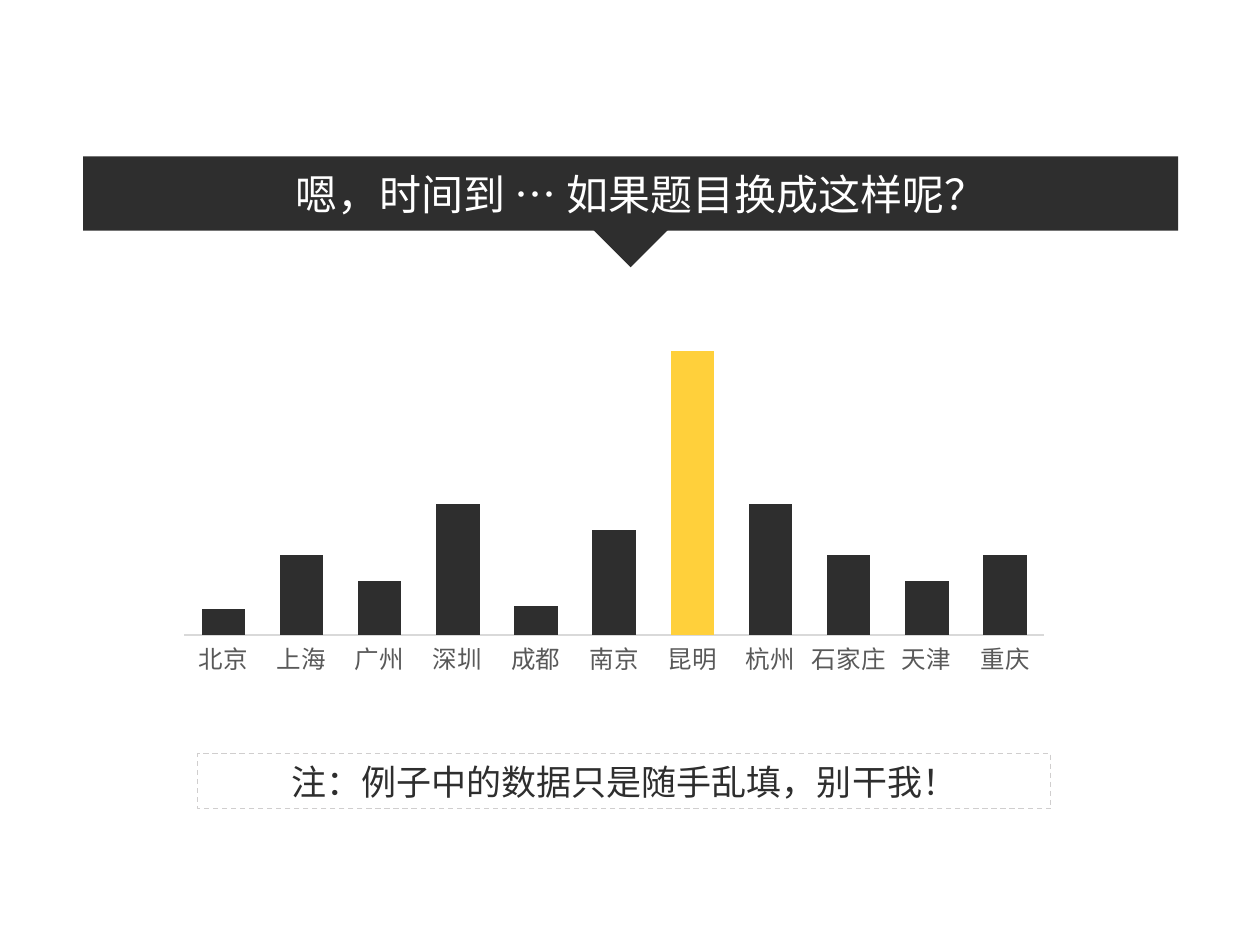
from lxml.etree import SubElement
from pptx import Presentation
from pptx.chart.data import CategoryChartData
from pptx.dml.color import RGBColor
from pptx.enum.chart import XL_CHART_TYPE, XL_TICK_LABEL_POSITION, XL_TICK_MARK
from pptx.enum.dml import MSO_LINE
from pptx.enum.shapes import MSO_SHAPE
from pptx.enum.text import MSO_ANCHOR, PP_ALIGN
from pptx.oxml import parse_xml
from pptx.oxml.ns import nsdecls, qn
from pptx.util import Inches, Pt

DARK, YELLOW, WHITE = "2E2E2E", "FFD03B", "FFFFFF"
LABEL_GRAY, AXIS_GRAY, BORDER_GRAY = "595959", "D9D9D9", "D0CECE"
BODY_FONT, TITLE_FONT = "Noto Sans CJK SC", "Noto Sans CJK TC"

CITY_VALUES = {
    "北京": 9, "上海": 28, "广州": 19, "深圳": 46, "成都": 10, "南京": 37,
    "昆明": 100, "杭州": 46, "石家庄": 28, "天津": 19, "重庆": 28,
}
HIGHLIGHTED_CITY = "昆明"


def rgb(color):
    return RGBColor.from_string(color)


def format_font(font, size, color, name):
    """Set the Latin and the East Asian typeface along with size and colour."""
    font.size = Pt(size)
    font.name = name
    font.color.rgb = rgb(color)
    east_asian = SubElement(font._element, qn("a:ea"))
    east_asian.set("typeface", name)


def write_text(shape, text, size=20, color=DARK, font=BODY_FONT, wrap=True):
    frame = shape.text_frame
    frame.word_wrap = wrap
    frame.vertical_anchor = MSO_ANCHOR.MIDDLE
    paragraph = frame.paragraphs[0]
    paragraph.alignment = PP_ALIGN.CENTER
    run = paragraph.add_run()
    run.text = text
    format_font(run.font, size, color, font)


def add_block(slide, kind, left, top, width, height, fill=None):
    block = slide.shapes.add_shape(
        kind, Inches(left), Inches(top), Inches(width), Inches(height))
    block.shadow.inherit = False
    block.line.fill.background()
    if fill:
        block.fill.solid()
        block.fill.fore_color.rgb = rgb(fill)
    else:
        block.fill.background()
    return block


def add_title_banner(slide, left, top, width, height):
    add_block(slide, MSO_SHAPE.RECTANGLE, left, top, width, height, DARK)

    pointer_side = 0.44
    pointer = add_block(
        slide, MSO_SHAPE.RIGHT_TRIANGLE, left + (width - pointer_side) / 2,
        top + height - 0.24, pointer_side, pointer_side, DARK)
    pointer.rotation = 315

    title_width, title_height = 5.68, 0.5
    title = slide.shapes.add_textbox(
        Inches(left + (width - title_width) / 2 + 0.08),
        Inches(top + (height - title_height) / 2),
        Inches(title_width), Inches(title_height))
    write_text(title, "嗯，时间到 … 如果题目换成这样呢？",
               size=24, color=WHITE, font=TITLE_FONT, wrap=False)


def set_plot_area(chart, x, y, w, h):
    """Fix the inner plot area, in fractions of the chart."""
    sizes = "".join(f'<c:{tag} val="{value}"/>'
                    for tag, value in (("x", x), ("y", y), ("w", w), ("h", h)))
    layout = parse_xml(
        f'<c:layout {nsdecls("c")}><c:manualLayout>'
        '<c:layoutTarget val="inner"/><c:xMode val="edge"/><c:yMode val="edge"/>'
        f'{sizes}</c:manualLayout></c:layout>')
    plot_area = chart._chartSpace.chart.plotArea
    for old_layout in plot_area.findall(qn("c:layout")):
        plot_area.remove(old_layout)
    plot_area.insert(0, layout)


def add_city_chart(slide, left, top, width, height):
    data = CategoryChartData()
    data.categories = list(CITY_VALUES)
    data.add_series("Series 1", list(CITY_VALUES.values()))
    chart = slide.shapes.add_chart(
        XL_CHART_TYPE.COLUMN_CLUSTERED, Inches(left), Inches(top),
        Inches(width), Inches(height), data).chart
    chart.has_legend = False
    chart.has_title = False
    format_font(chart.font, 10, "000000", BODY_FONT)
    set_plot_area(chart, 0.02, 0.12, 0.96, 0.75)

    values = chart.value_axis
    values.minimum_scale, values.maximum_scale = 0, 100
    values.has_major_gridlines = False
    values.visible = False

    cities = chart.category_axis
    cities.major_tick_mark = cities.minor_tick_mark = XL_TICK_MARK.NONE
    cities.tick_label_position = XL_TICK_LABEL_POSITION.NEXT_TO_AXIS
    cities.format.line.color.rgb = rgb(AXIS_GRAY)
    cities.format.line.width = Pt(0.75)
    format_font(cities.tick_labels.font, 14, LABEL_GRAY, BODY_FONT)

    plot = chart.plots[0]
    plot.gap_width, plot.overlap = 80, -27
    plot.vary_by_categories = False
    bars = plot.series[0]
    highlight = bars.points[list(CITY_VALUES).index(HIGHLIGHTED_CITY)]
    for part, color in ((bars, DARK), (highlight, YELLOW)):
        part.format.fill.solid()
        part.format.fill.fore_color.rgb = rgb(color)


def add_note(slide, left, top, width, height):
    note = add_block(slide, MSO_SHAPE.RECTANGLE, left, top, width, height)
    note.line.color.rgb = rgb(BORDER_GRAY)
    note.line.width = Pt(0.75)
    note.line.dash_style = MSO_LINE.DASH
    write_text(note, "注：例子中的数据只是随手乱填，别干我！")


def main():
    presentation = Presentation()
    presentation.slide_width = Inches(10)
    presentation.slide_height = Inches(7.5)
    slide = presentation.slides.add_slide(presentation.slide_layouts[6])
    add_title_banner(slide, 0.66, 1.24, 8.69, 0.59)
    add_city_chart(slide, 1.32, 2.43, 7.11, 3)
    add_note(slide, 1.57, 5.98, 6.77, 0.44)
    presentation.save("out.pptx")


if __name__ == "__main__":
    main()
